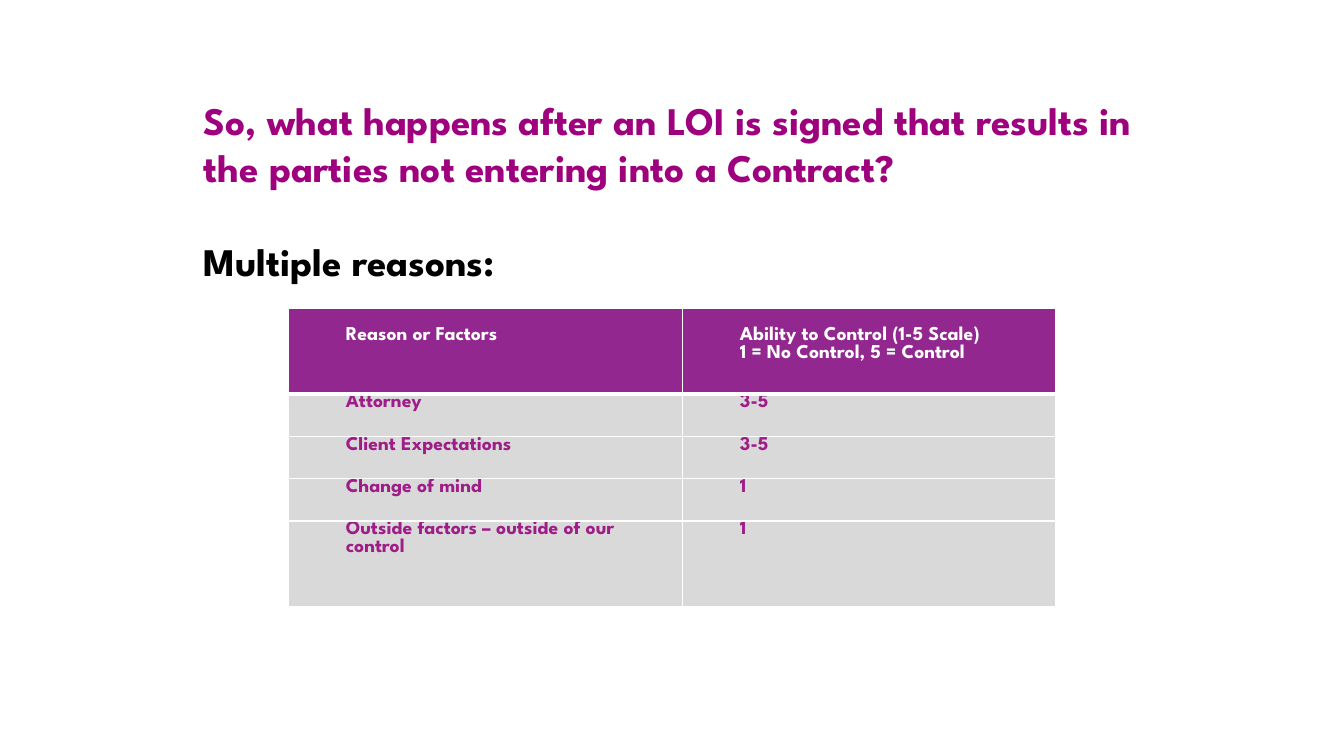
from lxml.etree import SubElement
from pptx import Presentation
from pptx.dml.color import RGBColor
from pptx.enum.text import MSO_ANCHOR, MSO_AUTO_SIZE, PP_ALIGN
from pptx.oxml.ns import qn
from pptx.util import Inches, Pt

FONT = "League Spartan"
ROWS = [
    ("Reason or Factors", "Ability to Control (1-5 Scale)\n1 = No Control, 5 = Control"),
    ("Attorney", "3-5"),
    ("Client Expectations", "3-5"),
    ("Change of mind", "1"),
    ("Outside factors – outside of our control", "1"),
]
WIDTHS = [3.91, 3.7]
HEIGHTS = [0.85, 0.42, 0.42, 0.42, 0.85]


def paint(code):
    return RGBColor.from_string(code)


def write(para, text, size=14, color="000000", line=None, before=0):
    para.alignment = PP_ALIGN.LEFT
    para.space_before = Pt(before)
    if line:
        para.line_spacing = Pt(line)
    run = para.add_run()
    run.text = text
    font = run.font
    font.name, font.size, font.bold = FONT, Pt(size), True
    font.color.rgb = paint(color)


def pad(item, left, top, right, bottom):
    item.margin_left, item.margin_top = Inches(left), Inches(top)
    item.margin_right, item.margin_bottom = Inches(right), Inches(bottom)


def edge(cell, side, width):
    line = SubElement(cell._tc.get_or_add_tcPr(), qn(f"a:ln{side}"), w=str(Pt(width)))
    fill = SubElement(line, qn("a:solidFill"))
    SubElement(fill, qn("a:srgbClr"), val="FFFFFF")


def add_title(slide, left, top, width, height):
    title = slide.shapes.title
    title.left, title.top = Inches(left), Inches(top)
    title.width, title.height = Inches(width), Inches(height)
    frame = title.text_frame
    frame.word_wrap = True
    frame.auto_size = MSO_AUTO_SIZE.NONE
    frame.vertical_anchor = MSO_ANCHOR.MIDDLE
    pad(frame, 0.1, 0.11, 0.1, 0.52)
    write(
        frame.paragraphs[0],
        "So, what happens after an LOI is signed that results in "
        "the parties not entering into a Contract?",
        size=27.9, color="9E007E", line=33.6,
    )
    write(frame.add_paragraph(), "Multiple reasons:", size=27.9, line=33.6, before=33.6)


def fill_cell(cell, text, row):
    head = row == 0
    for side in "LR":
        edge(cell, side, 1)
    edge(cell, "T", 3 if row == 1 else 1)
    edge(cell, "B", 3 if head else 1)
    cell.fill.solid()
    cell.fill.fore_color.rgb = paint("92278F" if head else "D9D9D9")
    cell.vertical_anchor = MSO_ANCHOR.TOP
    pad(cell, 0.57, 0.18 if head else 0, 0.07, 0)
    frame = cell.text_frame
    for i, line in enumerate(text.split("\n")):
        para = frame.add_paragraph() if i else frame.paragraphs[0]
        write(para, line, color="FFFFFF" if head else "9F1D88")


def add_grid(slide, left, top):
    box = [Inches(n) for n in (left, top, sum(WIDTHS), sum(HEIGHTS))]
    table = slide.shapes.add_table(len(ROWS), len(WIDTHS), *box).table
    for col, width in zip(table.columns, WIDTHS):
        col.width = Inches(width)
    for r, (texts, height) in enumerate(zip(ROWS, HEIGHTS)):
        table.rows[r].height = Inches(height)
        for c, text in enumerate(texts):
            fill_cell(table.cell(r, c), text, r)


def main():
    deck = Presentation()
    deck.slide_width, deck.slide_height = Inches(13.33), Inches(7.5)
    slide = deck.slides.add_slide(deck.slide_layouts[5])
    slide.background.fill.solid()
    slide.background.fill.fore_color.rgb = paint("FFFFFF")
    add_title(slide, 1.92, 0.85, 9.49, 2.48)
    add_grid(slide, 2.86, 3.06)
    deck.save("out.pptx")


if __name__ == "__main__":
    main()
